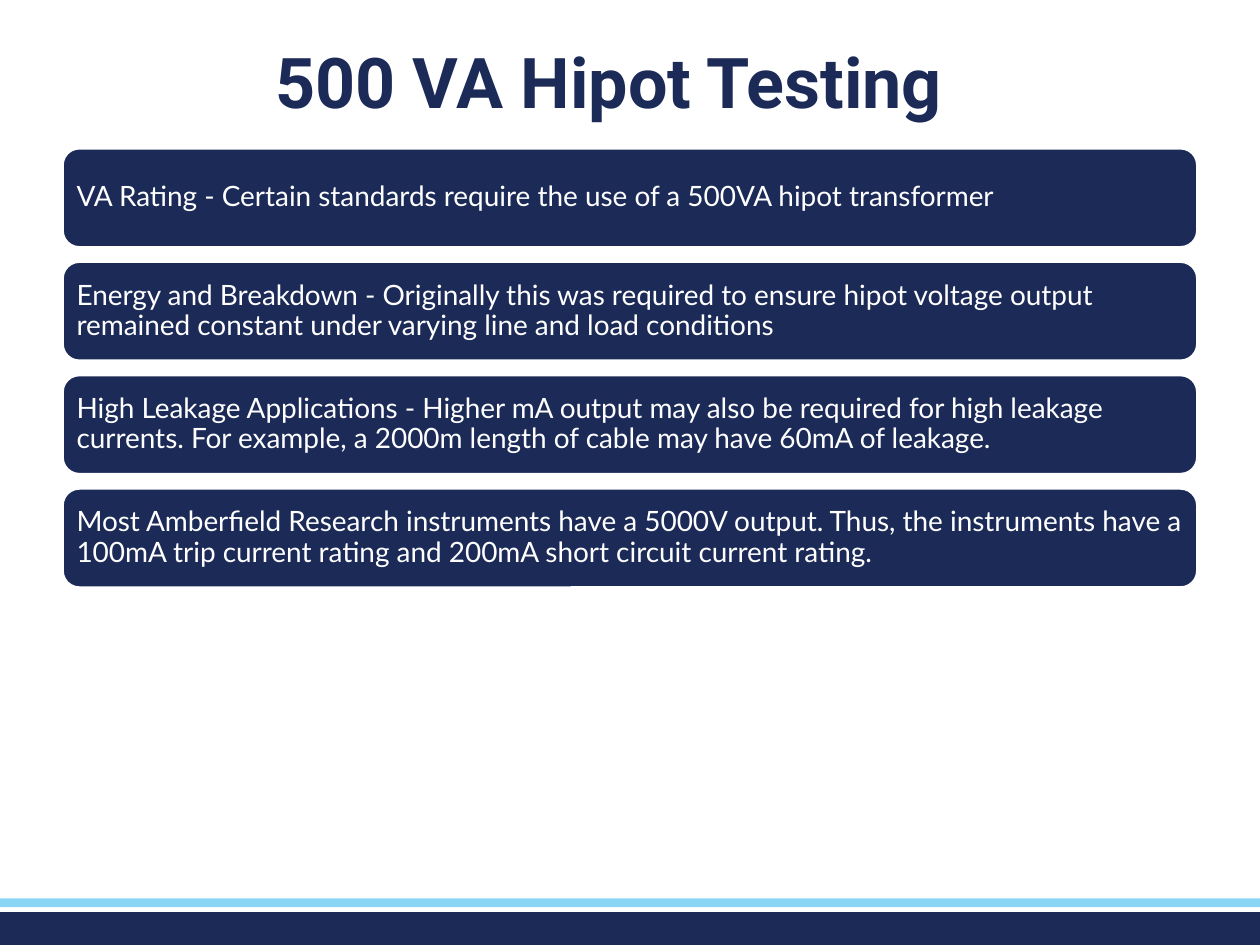
from typing import NamedTuple

from pptx import Presentation
from pptx import util as u
from pptx.dml.color import RGBColor
from pptx.enum import shapes, text

COLORS = {"navy": "1C2A58", "sky": "88D6F4", "white": "FFFFFF"}


class Box(NamedTuple):
    left: float
    top: float
    width: float
    height: float


class Band(NamedTuple):
    box: Box
    color: str


FOOTER_BANDS = [
    Band(Box(0, 7.24, 10, 0.26), "navy"),
    Band(Box(0, 7.13, 10, 0.07), "sky"),
]
FIRST_CARD = Box(0.5, 1.18, 9, 0.78)
CARD_PITCH = 0.9
CARD_INSET = 0.11
REQUIREMENTS = [
    "VA Rating - Certain standards require the use of a 500VA hipot transformer",
    "Energy and Breakdown - Originally this was required to ensure hipot voltage "
    "output remained constant under varying line and load conditions",
    "High Leakage Applications - Higher mA output may also be required for high "
    "leakage currents. For example, a 2000m length of cable may have 60mA of leakage.",
    "Most Amberfield Research instruments have a 5000V output. Thus, the instruments "
    "have a 100mA trip current rating and 200mA short circuit current rating.",
]


def rgb(name: str) -> RGBColor:
    return RGBColor.from_string(COLORS[name])


def inches(box: Box) -> list:
    return [u.Inches(length) for length in box]


def add_block(slide, kind, box: Box, color: str, outline: str | None = None):
    """Draw a filled shape, with a 1 pt outline if one is named."""
    block = slide.shapes.add_shape(kind, *inches(box))
    block.shadow.inherit = False
    block.fill.solid()
    block.fill.fore_color.rgb = rgb(color)
    if outline:
        block.line.color.rgb = rgb(outline)
        block.line.width = u.Pt(1)
    else:
        block.line.fill.background()
    return block


def write(frame, wording: str, *, font: str, size: float, color: str,
          bold: bool = False, align=text.PP_ALIGN.LEFT,
          anchor=text.MSO_ANCHOR.TOP, inset: float | None = None) -> None:
    frame.word_wrap = True
    frame.vertical_anchor = anchor
    if inset is not None:
        frame.margin_left = frame.margin_right = u.Inches(inset)
        frame.margin_top = frame.margin_bottom = u.Inches(inset)
    paragraph = frame.paragraphs[0]
    paragraph.alignment = align
    paragraph.line_spacing = 0.9
    run = paragraph.add_run()
    run.text = wording
    run.font.name = font
    run.font.size = u.Pt(size)
    run.font.bold = bold
    run.font.color.rgb = rgb(color)


def main() -> None:
    deck = Presentation()
    deck.slide_width, deck.slide_height = u.Inches(10), u.Inches(7.5)
    slide = deck.slides.add_slide(deck.slide_layouts[6])

    for band in FOOTER_BANDS:
        add_block(slide, shapes.MSO_SHAPE.RECTANGLE, band.box, band.color)

    for row, requirement in enumerate(REQUIREMENTS):
        place = FIRST_CARD._replace(top=FIRST_CARD.top + row * CARD_PITCH)
        card = add_block(slide, shapes.MSO_SHAPE.ROUNDED_RECTANGLE, place,
                         "navy", outline="white")
        # The rounded corners already indent the text area by about 0.04 inch.
        write(card.text_frame, requirement, font="Lato", size=16, color="white",
              anchor=text.MSO_ANCHOR.MIDDLE, inset=CARD_INSET - 0.04)

    title = slide.shapes.add_textbox(*inches(Box(0.33, 0.33, 9, 0.66)))
    write(title.text_frame, "500 VA Hipot Testing", font="Roboto", size=40,
          color="navy", bold=True, align=text.PP_ALIGN.CENTER)

    deck.save("out.pptx")


if __name__ == "__main__":
    main()
